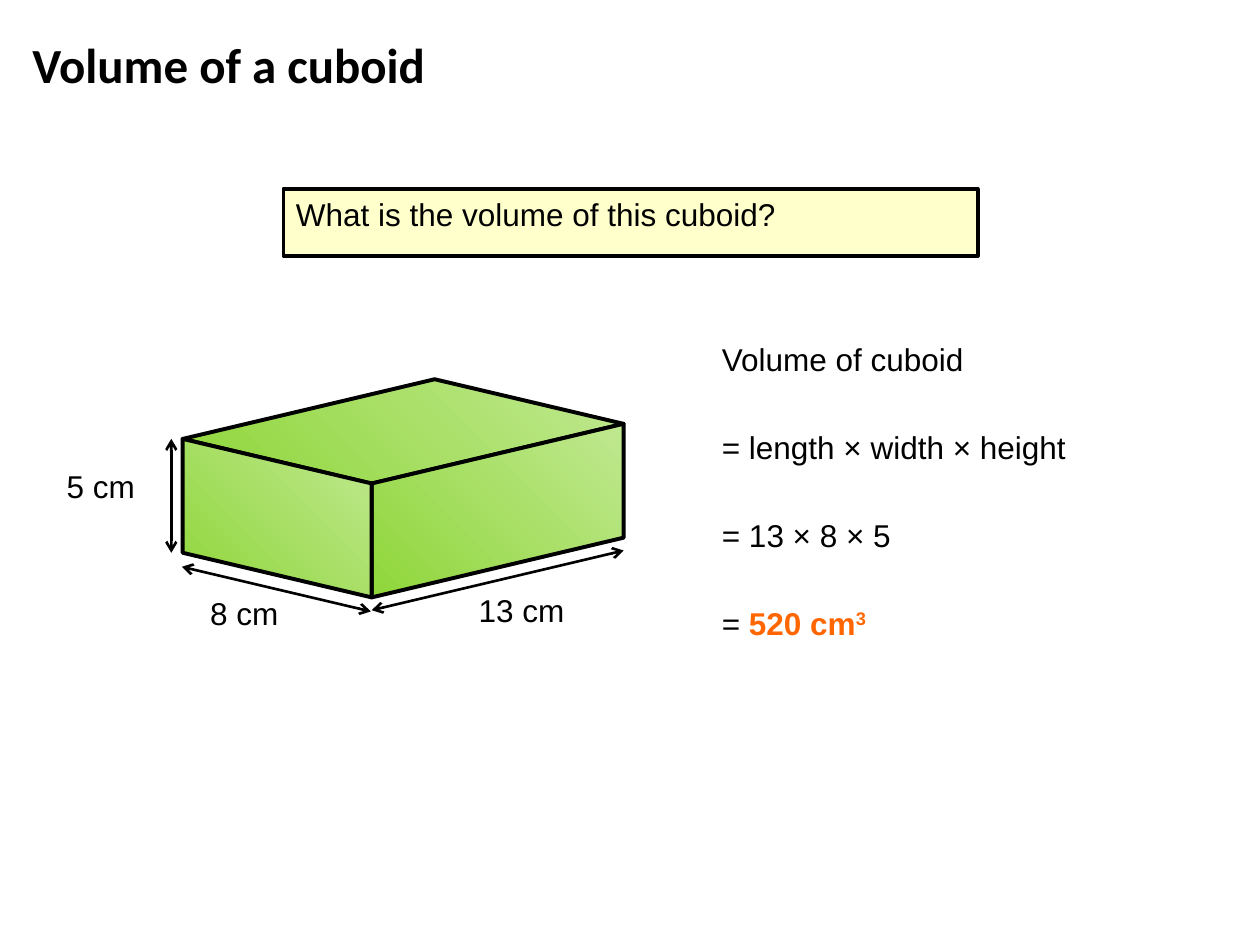
from dataclasses import dataclass

import lxml.etree
import pptx
import pptx.dml.color
import pptx.enum.shapes
import pptx.enum.text
import pptx.oxml.ns
import pptx.util

Pt = pptx.util.Pt
qn = pptx.oxml.ns.qn
Point = tuple[float, float]


@dataclass
class Label:
    text: str
    left: float
    top: float
    width: float
    height: float = 36
    size: float = 18
    font: str = "Arial"
    bold: bool = False
    wrap: bool = False
    middle: bool = False


@dataclass
class Face:
    corners: list[Point]


@dataclass
class Dimension:
    start: Point
    end: Point


def rgb(value: str) -> pptx.dml.color.RGBColor:
    return pptx.dml.color.RGBColor.from_string(value)


def set_line(line, width: float) -> None:
    line.color.rgb = rgb(BLACK)
    line.width = Pt(width)


def fill_text(sp, label: Label):
    tf = sp.text_frame
    tf.word_wrap = label.wrap
    anchor = pptx.enum.text.MSO_ANCHOR
    tf.vertical_anchor = anchor.MIDDLE if label.middle else anchor.TOP
    p = tf.paragraphs[0]
    p.alignment = pptx.enum.text.PP_ALIGN.LEFT
    p.font.size = Pt(label.size)
    p.font.name = label.font
    p.font.bold = label.bold
    p.font.color.rgb = rgb(BLACK)
    p.add_run().text = label.text
    return p


def box(label: Label) -> list[int]:
    return [Pt(v) for v in (label.left, label.top, label.width, label.height)]


def draw_label(shapes, label: Label):
    return fill_text(shapes.add_textbox(*box(label)), label)


def draw_question(shapes, label: Label) -> None:
    sp = shapes.add_shape(pptx.enum.shapes.MSO_SHAPE.RECTANGLE, *box(label))
    sp.shadow.inherit = False
    sp.fill.solid()
    sp.fill.fore_color.rgb = rgb("FFFFCC")
    set_line(sp.line, 2.25)
    fill_text(sp, label)


def draw_face(shapes, face: Face) -> None:
    start, *rest = [(Pt(x), Pt(y)) for x, y in face.corners]
    builder = shapes.build_freeform(*start)
    builder.add_line_segments(rest, close=True)
    sp = builder.convert_to_shape()
    sp.shadow.inherit = False
    sp.fill.gradient()
    sp.fill.gradient_angle = 45
    for stop, color in zip(sp.fill.gradient_stops, ("8FD63A", "C0E890")):
        stop.color.rgb = rgb(color)
    set_line(sp.line, 2.25)


def draw_dimension(shapes, dim: Dimension) -> None:
    ends = [Pt(v) for v in (*dim.start, *dim.end)]
    sp = shapes.add_connector(pptx.enum.shapes.MSO_CONNECTOR.STRAIGHT, *ends)
    set_line(sp.line, 1.5)
    ln = sp.line._get_or_add_ln()
    for tag in ("a:headEnd", "a:tailEnd"):
        lxml.etree.SubElement(ln, qn(tag), type="arrow")
    lxml.etree.SubElement(sp._element.spPr, qn("a:effectLst"))


def add_result(p) -> None:
    for text, baseline in (("520 cm", None), ("3", "30000")):
        r = p.add_run()
        r.text = text
        r.font.bold = True
        r.font.color.rgb = rgb("FF6600")
        if baseline:
            r._r.get_or_add_rPr().set("baseline", baseline)


BLACK = "000000"
DEPTH = 65.1
LEFT, FRONT, RIGHT, BACK = (104.4, 250.8), (212.4, 276.3), (356.4, 242.2), (248.4, 216.7)


def shift(point: Point, dx: float, dy: float) -> Point:
    return point[0] + dx, point[1] + dy


def side(a: Point, b: Point) -> Face:
    return Face([a, b, shift(b, 0, DEPTH), shift(a, 0, DEPTH)])


FACES = [Face([BACK, LEFT, FRONT, RIGHT]), side(RIGHT, FRONT), side(LEFT, FRONT)]
DIMENSIONS = [
    Dimension(shift(LEFT, -0.5, DEPTH + 8), shift(FRONT, -0.5, DEPTH + 8)),
    Dimension(shift(FRONT, 0, DEPTH + 7.3), shift(RIGHT, 0, DEPTH + 7.3)),
    Dimension(shift(LEFT, -6.5, 0), shift(LEFT, -6.5, DEPTH)),
]
TITLE = Label("Volume of a cuboid", 11.5, 11.5, 518.4, 49.7, 28, "Calibri", True, True, True)
QUESTION = Label("What is the volume of this cuboid?", 162, 108, 396.7, 38.2, wrap=True)
SIZES = [
    Label("5 cm", 31, 263.5, 66.2),
    Label("8 cm", 113, 336.2, 66.2),
    Label("13 cm", 266.4, 334.1, 79.9),
]
STEPS = [
    ("Volume of cuboid", 200.2),
    ("= length × width × height", 276.5),
    ("= 13 × 8 × 5", 143.3),
    ("= ", 125.3),
]


def main() -> None:
    prs = pptx.Presentation()
    prs.slide_width, prs.slide_height = Pt(720), Pt(540)
    shapes = prs.slides.add_slide(prs.slide_layouts[6]).shapes
    draw_label(shapes, TITLE)
    draw_question(shapes, QUESTION)
    for face in FACES:
        draw_face(shapes, face)
    for dim in DIMENSIONS:
        draw_dimension(shapes, dim)
    for label in SIZES:
        draw_label(shapes, label)
    for i, (text, width) in enumerate(STEPS):
        p = draw_label(shapes, Label(text, 405.4, 190.6 + 50.3 * i, width))
    add_result(p)
    prs.save("out.pptx")


if __name__ == "__main__":
    main()
